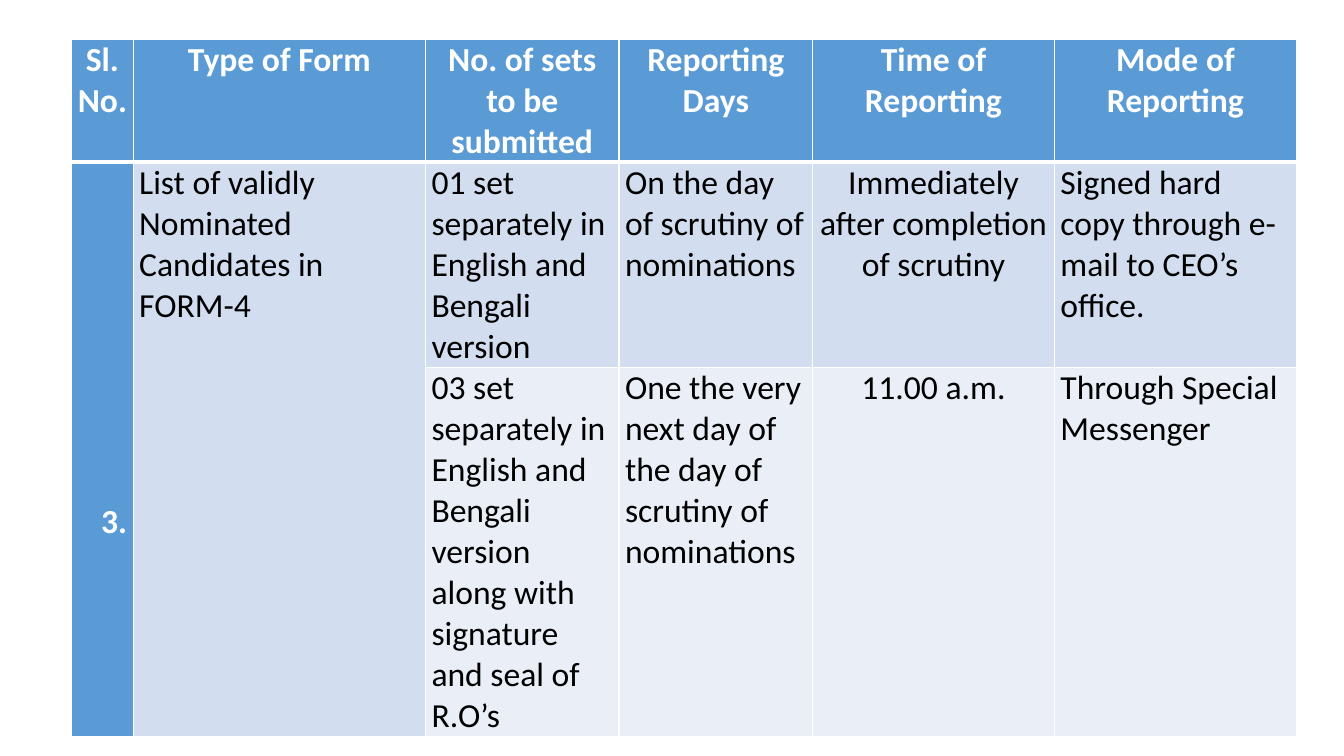
from dataclasses import dataclass

from lxml import etree
from pptx import Presentation
from pptx.dml.color import RGBColor
from pptx.enum.text import MSO_ANCHOR, PP_ALIGN
from pptx.oxml.ns import qn
from pptx.table import Table, _Cell
from pptx.util import Inches, Pt

LEFT, CENTER, RIGHT = PP_ALIGN.LEFT, PP_ALIGN.CENTER, PP_ALIGN.RIGHT
TOP, BOTTOM = MSO_ANCHOR.TOP, MSO_ANCHOR.BOTTOM
COLORS = {
    "header": "5B9BD5",
    "band": "D2DEEF",
    "pale": "EAEFF7",
    "white": "FFFFFF",
    "black": "000000",
}
SLIDE_WIDTH, SLIDE_HEIGHT = Inches(13.33), Inches(7.5)
TABLE_LEFT, TABLE_TOP = 0.0533, 0.052
COLUMN_SHARES = [0.0458, 0.2175, 0.144, 0.144, 0.18, 0.18]
ROW_SHARES = [0.16, 0.266, 0.48]
NUMBER_LIFT = 0.256
SIDE_MARGIN = Inches(0.06)
THIN, THICK = Pt(1), Pt(3)
HEADINGS = [
    "Sl. No.",
    "Type of Form",
    "No. of sets to be submitted",
    "Reporting Days",
    "Time of Reporting",
    "Mode of Reporting",
]


@dataclass(frozen=True)
class Entry:
    """One table cell placed by row and column."""

    row: int
    column: int
    text: str
    fill: str
    align: PP_ALIGN = LEFT
    bold: bool = False
    row_span: int = 1
    anchor: MSO_ANCHOR = TOP
    bottom: float = 0


ENTRIES = [
    *(Entry(0, column, heading, "header", CENTER, True)
      for column, heading in enumerate(HEADINGS)),
    Entry(1, 0, "3.", "header", RIGHT, True, 2, BOTTOM, NUMBER_LIFT),
    Entry(1, 1, "List of validly Nominated Candidates in FORM-4", "band", row_span=2),
    Entry(1, 2, "01 set separately in English and Bengali version", "band"),
    Entry(1, 3, "On the day of scrutiny of nominations", "band"),
    Entry(1, 4, "Immediately after completion of scrutiny", "band", CENTER),
    Entry(1, 5, "Signed hard copy through e-mail to CEO’s office.", "band"),
    Entry(2, 2, "03 set separately in English and Bengali version along with "
                "signature and seal of R.O’s", "pale"),
    Entry(2, 3, "One the very next day of the day of scrutiny of nominations", "pale"),
    Entry(2, 4, "11.00 a.m.", "pale", CENTER),
    Entry(2, 5, "Through Special Messenger", "pale"),
]


def apply_format(target: object, values: dict[str, object]) -> None:
    """Set each named attribute on the target."""
    for name, value in values.items():
        setattr(target, name, value)


def paint_cell(cell: _Cell, row: int, fill: str) -> None:
    """Fill a cell and give it white borders, thick below the header."""
    cell.fill.solid()
    cell.fill.fore_color.rgb = RGBColor.from_string(COLORS[fill])
    widths = {
        "a:lnL": THIN,
        "a:lnR": THIN,
        "a:lnT": THICK if row == 1 else THIN,
        "a:lnB": THICK if row == 0 else THIN,
    }
    properties = cell._tc.get_or_add_tcPr()
    for position, (tag, width) in enumerate(widths.items()):
        line = etree.Element(qn(tag), w=str(width))
        solid = etree.SubElement(line, qn("a:solidFill"))
        etree.SubElement(solid, qn("a:srgbClr"), val=COLORS["white"])
        properties.insert(position, line)


def write_entry(table: Table, entry: Entry) -> None:
    """Write one entry with its fill, span and text format."""
    cell = table.cell(entry.row, entry.column)
    last_row = entry.row + entry.row_span - 1
    if entry.row_span > 1:
        cell.merge(table.cell(last_row, entry.column))
    for row in range(entry.row, last_row + 1):
        paint_cell(table.cell(row, entry.column), row, entry.fill)
    apply_format(cell, {
        "text": entry.text,
        "margin_left": SIDE_MARGIN,
        "margin_right": SIDE_MARGIN,
        "margin_top": 0,
        "margin_bottom": round(SLIDE_HEIGHT * entry.bottom),
        "vertical_anchor": entry.anchor,
    })
    paragraph = cell.text_frame.paragraphs[0]
    paragraph.alignment = entry.align
    font = paragraph.runs[0].font
    apply_format(font, {"name": "Calibri", "size": Pt(24), "bold": entry.bold})
    color = "white" if entry.fill == "header" else "black"
    font.color.rgb = RGBColor.from_string(COLORS[color])


def main() -> None:
    """Build the reporting table slide."""
    presentation = Presentation()
    apply_format(presentation, {"slide_width": SLIDE_WIDTH, "slide_height": SLIDE_HEIGHT})
    slide = presentation.slides.add_slide(presentation.slide_layouts[6])
    table = slide.shapes.add_table(
        len(ROW_SHARES), len(COLUMN_SHARES),
        round(SLIDE_WIDTH * TABLE_LEFT), round(SLIDE_HEIGHT * TABLE_TOP),
        round(SLIDE_WIDTH * sum(COLUMN_SHARES)), round(SLIDE_HEIGHT * sum(ROW_SHARES)),
    ).table
    for column, share in zip(table.columns, COLUMN_SHARES):
        column.width = round(SLIDE_WIDTH * share)
    for row, share in zip(table.rows, ROW_SHARES):
        row.height = round(SLIDE_HEIGHT * share)
    for entry in ENTRIES:
        write_entry(table, entry)
    presentation.save("out.pptx")


if __name__ == "__main__":
    main()
